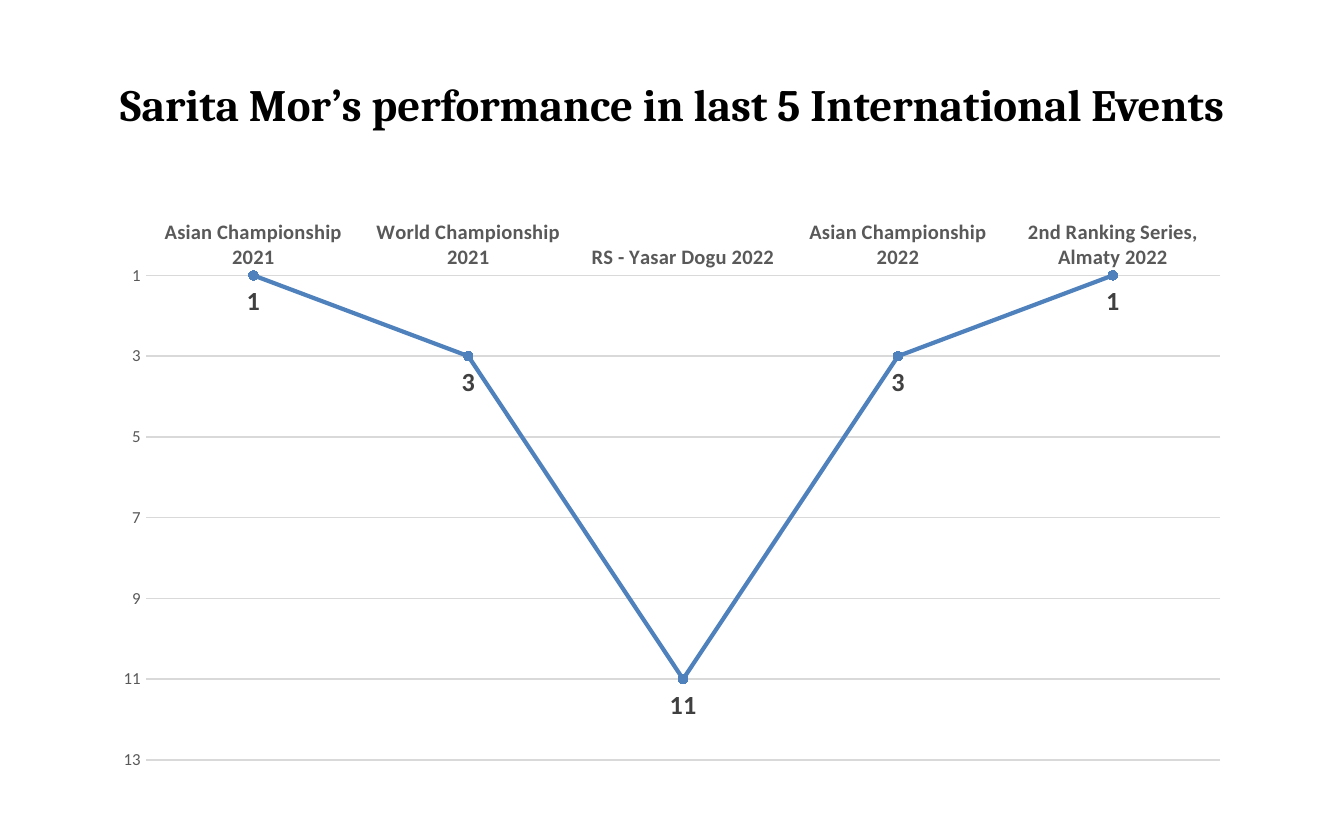
from pptx import Presentation
from pptx.chart.data import CategoryChartData
from pptx.dml.color import RGBColor
from pptx.enum.chart import XL_CHART_TYPE, XL_LABEL_POSITION, XL_MARKER_STYLE, XL_TICK_MARK
from pptx.enum.text import MSO_ANCHOR, PP_ALIGN
from pptx.util import Inches, Pt

COLORS = {
    "title": "000000",
    "axis": "595959",
    "label": "404040",
    "grid": "D9D9D9",
    "rank": "4F81BD",
}
RANKS = [
    ("Asian Championship 2021", 1),
    ("World Championship 2021", 3),
    ("RS - Yasar Dogu 2022", 11),
    ("Asian Championship 2022", 3),
    ("2nd Ranking Series, Almaty 2022", 1),
]
WIDTH, HEIGHT = Inches(10), Inches(6.25)


def color(name):
    return RGBColor.from_string(COLORS[name])


def share(left, top, width, height):
    return (int(WIDTH * left), int(HEIGHT * top),
            int(WIDTH * width), int(HEIGHT * height))


def style_font(font, size, shade, bold=False, family="Calibri"):
    font.name = family
    font.size = Pt(size)
    font.bold = bold
    font.color.rgb = color(shade)


def style_line(line, shade, width):
    line.color.rgb = color(shade)
    line.width = Pt(width)


def add_title(slide, wording):
    title = slide.shapes.title
    title.left, title.top, title.width, title.height = share(0.05, 0.04, 0.9, 0.167)
    frame = title.text_frame
    frame.text = wording
    frame.vertical_anchor = MSO_ANCHOR.MIDDLE
    heading = frame.paragraphs[0]
    heading.alignment = PP_ALIGN.CENTER
    style_font(heading.runs[0].font, 24, "title", True, "Cambria")


def style_axes(chart):
    events, places = chart.category_axis, chart.value_axis
    for axis in (events, places):
        axis.major_tick_mark = axis.minor_tick_mark = XL_TICK_MARK.NONE
    style_font(events.tick_labels.font, 11, "axis", True)
    style_line(events.format.line, "grid", 0.75)

    places.reverse_order = True
    places.minimum_scale, places.maximum_scale = 1, 13
    places.major_unit = 2
    style_font(places.tick_labels.font, 9, "axis")
    places.format.line.fill.background()
    style_line(places.major_gridlines.format.line, "grid", 0.75)


def style_series(series):
    series.smooth = False
    style_line(series.format.line, "rank", 2.25)
    marker = series.marker
    marker.style = XL_MARKER_STYLE.CIRCLE
    marker.size = 5
    marker.format.fill.solid()
    marker.format.fill.fore_color.rgb = color("rank")
    style_line(marker.format.line, "rank", 0.75)

    labels = series.data_labels
    labels.show_value = True
    labels.position = XL_LABEL_POSITION.BELOW
    style_font(labels.font, 14, "label", True)


def add_rank_chart(slide):
    results = CategoryChartData()
    results.categories = [event for event, _ in RANKS]
    results.add_series("Series 1", [rank for _, rank in RANKS])
    chart = slide.shapes.add_chart(
        XL_CHART_TYPE.LINE_MARKERS, *share(0.075, 0.248, 0.85, 0.682), results).chart
    chart.has_title = False
    chart.has_legend = False
    style_font(chart.font, 10, "title")
    chart.plots[0].vary_by_categories = False
    style_axes(chart)
    style_series(chart.plots[0].series[0])


def main():
    deck = Presentation()
    deck.slide_width, deck.slide_height = WIDTH, HEIGHT
    slide = deck.slides.add_slide(deck.slide_layouts[5])
    add_title(slide, "Sarita Mor’s performance in last 5 International Events")
    add_rank_chart(slide)
    deck.save("out.pptx")


if __name__ == "__main__":
    main()
